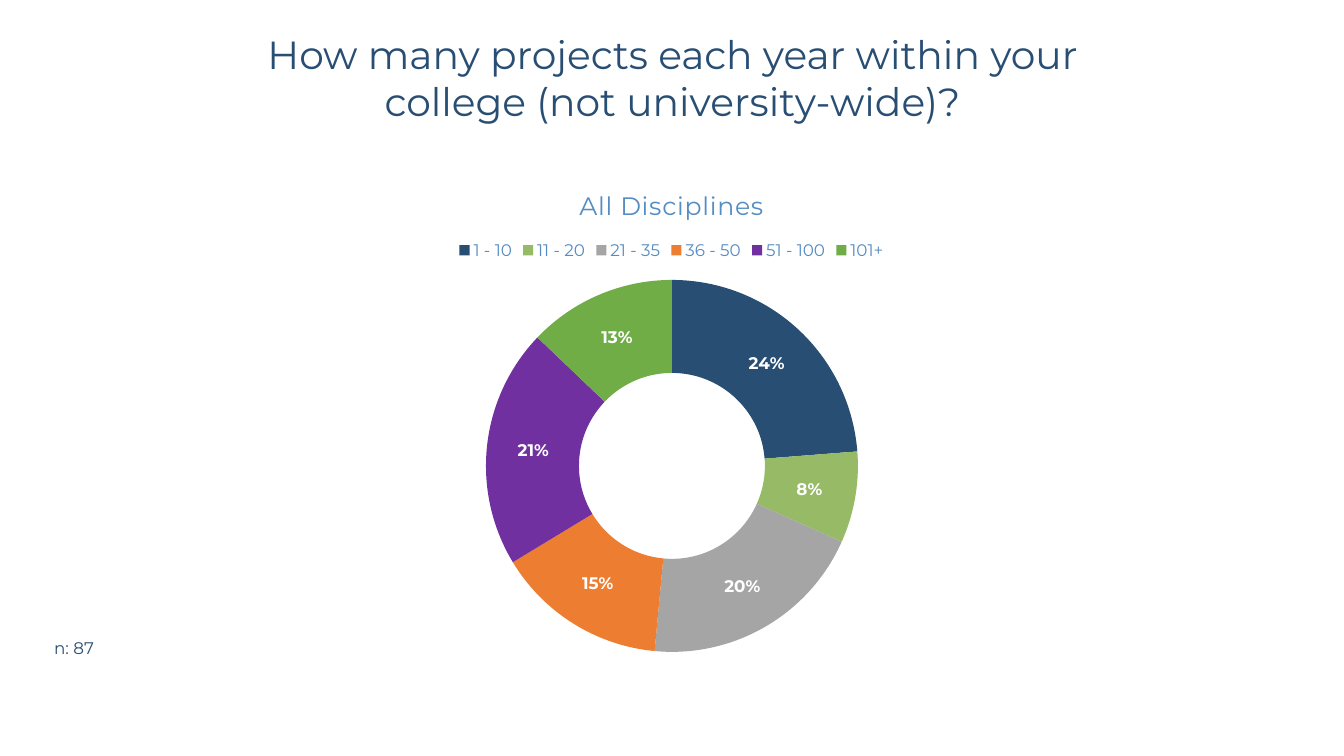
from dataclasses import dataclass

from lxml.etree import SubElement
from pptx import Presentation
from pptx.chart.data import CategoryChartData
from pptx.dml.color import RGBColor
from pptx.enum.chart import XL_CHART_TYPE, XL_LEGEND_POSITION
from pptx.enum.text import MSO_ANCHOR, MSO_AUTO_SIZE, PP_ALIGN
from pptx.oxml.ns import qn
from pptx.util import Pt

PX = 914400 / 100.8


@dataclass(frozen=True)
class Theme:
    font: str = "Montserrat"
    navy: str = "294E73"
    blue: str = "558CC3"
    white: str = "FFFFFF"
    heading: int = 28
    chart_heading: int = 18
    label: int = 12
    base: int = 10


theme = Theme()


def px(*lengths):
    return [round(length * PX) for length in lengths]


def style(font, size, color, bold=False):
    font.name = theme.font
    font.size = Pt(size)
    font.bold = bold
    font.color.rgb = RGBColor.from_string(color)


presentation = Presentation()
presentation.slide_width, presentation.slide_height = px(1344, 756)
slide = presentation.slides.add_slide(presentation.slide_layouts[5])

# Question and sample size
question = slide.shapes.title
question.left, question.top, question.width, question.height = px(257, 25, 831, 105)
sample_size = slide.shapes.add_textbox(*px(19, 633, 110, 30))
for box, wording, size in (
    (question, "How many projects each year within your college (not university-wide)?", theme.heading),
    (sample_size, "n: 87", theme.label),
):
    frame = box.text_frame
    frame.text = wording
    frame.word_wrap = True
    frame.auto_size = MSO_AUTO_SIZE.NONE
    frame.vertical_anchor = MSO_ANCHOR.TOP
    frame.paragraphs[0].alignment = PP_ALIGN.CENTER
    style(frame.paragraphs[0].runs[0].font, size, theme.navy)

# Doughnut of projects per year: range, share, colour
projects = [
    ("1 - 10", 24, theme.navy),
    ("11 - 20", 8, "96BA65"),
    ("21 - 35", 20, "A5A5A5"),
    ("36 - 50", 15, "ED7D31"),
    ("51 - 100", 21, "7030A0"),
    ("101+", 13, "70AD47"),
]
shares = CategoryChartData()
shares.categories = [name for name, _, _ in projects]
shares.add_series("Series 1", [share for _, share, _ in projects])
chart_left, chart_top, chart_width, chart_height = 298, 168, 747, 498
doughnut = slide.shapes.add_chart(
    XL_CHART_TYPE.DOUGHNUT, *px(chart_left, chart_top, chart_width, chart_height), shares
).chart
style(doughnut.font, theme.base, theme.navy)

# Chart heading and legend
doughnut.has_title = True
heading = doughnut.chart_title
heading.include_in_layout = False
heading.text_frame.text = "All Disciplines"
heading_run = heading.text_frame.paragraphs[0].runs[0]
style(heading_run.font, theme.chart_heading, theme.blue)
heading_run.font._element.set("spc", "50")

doughnut.has_legend = True
doughnut.legend.position = XL_LEGEND_POSITION.TOP
doughnut.legend.include_in_layout = False
style(doughnut.legend.font, theme.label, theme.blue)

# Slices and their percentages
plot = doughnut.plots[0]
plot.vary_by_categories = True
for index, (_, _, color) in enumerate(projects):
    slice_fill = plot.series[0].points[index].format.fill
    slice_fill.solid()
    slice_fill.fore_color.rgb = RGBColor.from_string(color)
plot.has_data_labels = True
percentages = plot.data_labels
percentages.show_value = False
percentages.show_percentage = True
percentages.number_format = "0%"
percentages.number_format_is_linked = False
style(percentages.font, theme.label, theme.white, bold=True)

# Fixed place of the ring inside the chart
plot_area = doughnut._chartSpace.chart.plotArea
plot_area.find(qn("c:doughnutChart")).find(qn("c:holeSize")).set("val", "50")
layout = plot_area.find(qn("c:layout"))
if layout is None:
    layout = SubElement(plot_area, qn("c:layout"))
    plot_area.insert(0, layout)
manual = SubElement(layout, qn("c:manualLayout"))
for tag, value in (
    ("layoutTarget", "inner"),
    ("xMode", "edge"),
    ("yMode", "edge"),
    ("x", (486 - chart_left) / chart_width),
    ("y", (280 - chart_top) / chart_height),
    ("w", 372 / chart_width),
    ("h", 372 / chart_height),
):
    SubElement(manual, qn(f"c:{tag}")).set("val", str(value))

presentation.save("out.pptx")
